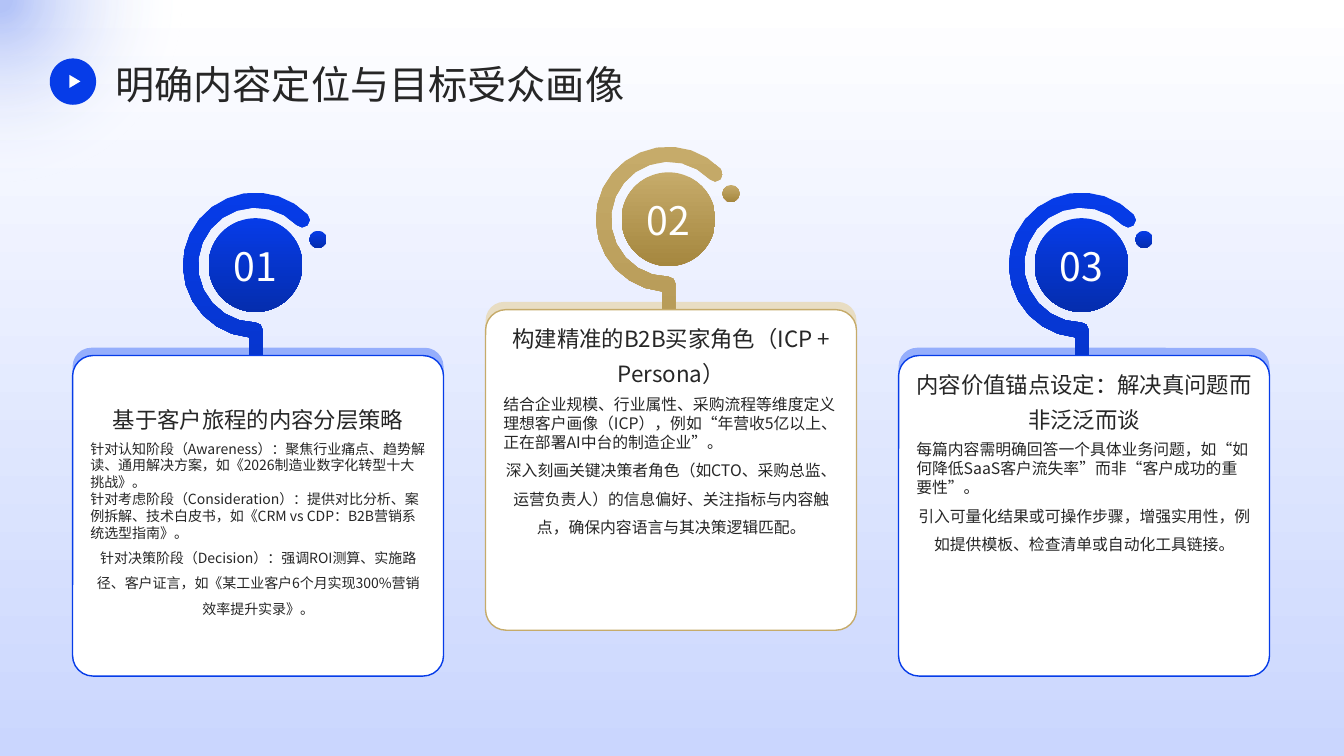
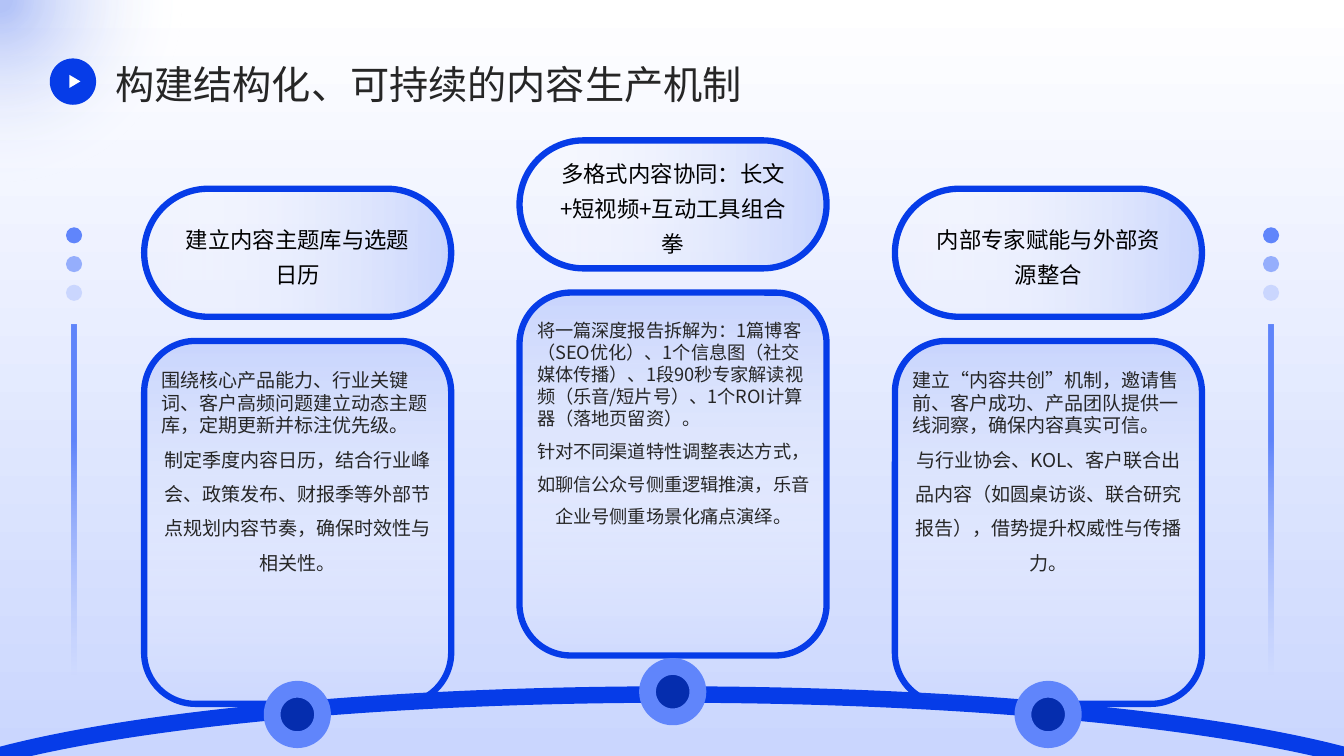
import math
from dataclasses import dataclass
from typing import Any, Iterable, Optional, Union

import pptx
import pptx.dml.color
import pptx.enum.shapes
import pptx.enum.text
import pptx.oxml
import pptx.oxml.ns
import pptx.util

KIND = pptx.enum.shapes.MSO_SHAPE
ALIGN = pptx.enum.text.PP_ALIGN
ANCHOR = pptx.enum.text.MSO_ANCHOR

# The slide is a grid of square cells, ten to the inch
WIDE, HIGH, CELL = 133.33, 75, 91440
FONT = "Noto Sans CJK SC"
BLUE, NAVY, SKY, MIST, PALE = "063CE8", "052DAE", "6085FB", "95AEFC", "CAD6FE"
GOLD, BRONZE, SAND = "C6AB6A", "A5873F", "E8DDC3"
WHITE, INK, BLACK = "FFFFFF", "262626", "000000"


@dataclass(frozen=True)
class Stop:
    at: int
    tone: str
    alpha: int = 100


@dataclass(frozen=True)
class Fade:
    stops: tuple[Stop, ...]
    angle: int = 90
    round: bool = False


@dataclass(frozen=True)
class Box:
    left: float
    top: float
    width: float
    height: float

    def units(self) -> list[int]:
        return [cell(n) for n in (self.left, self.top, self.width, self.height)]


@dataclass(frozen=True)
class Style:
    size: float
    tone: str = INK
    space: float = 1.0
    align: Any = ALIGN.CENTER
    anchor: Any = ANCHOR.MIDDLE


@dataclass(frozen=True)
class Topic:
    head: str
    body: tuple[str, ...]
    size: float
    lift: float = 0
    tones: tuple[str, str, str] = (BLUE, NAVY, MIST)


Fill = Union[str, Fade, None]


def cell(count: float) -> int:
    return round(count * CELL)


def color(tone: str) -> pptx.dml.color.RGBColor:
    return pptx.dml.color.RGBColor.from_string(tone)


def disc(x: float, y: float, size: float) -> Box:
    return Box(x - size / 2, y - size / 2, size, size)


def blend(item: Any, fade: Fade) -> None:
    """Fill a shape with a gradient whose stops may be clear."""
    stops = "".join(
        f'<a:gs pos="{stop.at * 1000}"><a:srgbClr val="{stop.tone}">'
        f'<a:alpha val="{stop.alpha * 1000}"/></a:srgbClr></a:gs>'
        for stop in fade.stops)
    way = (f'<a:lin ang="{fade.angle * 60000}" scaled="0"/>' if not fade.round else
           '<a:path path="circle"><a:fillToRect l="50000" t="50000" '
           'r="50000" b="50000"/></a:path>')
    node = pptx.oxml.parse_xml(
        f'<a:gradFill {pptx.oxml.ns.nsdecls("a")} rotWithShape="1">'
        f'<a:gsLst>{stops}</a:gsLst>{way}</a:gradFill>')
    item.fill.background()
    props = item._element.spPr
    props.replace(props.find(pptx.oxml.ns.qn("a:noFill")), node)


def paint(item: Any, fill: Fill, line: str = "", width: float = 0) -> None:
    item.shadow.inherit = False
    if isinstance(fill, Fade):
        blend(item, fill)
    elif fill:
        item.fill.solid()
        item.fill.fore_color.rgb = color(fill)
    else:
        item.fill.background()
    if line:
        item.line.color.rgb = color(line)
        item.line.width = pptx.util.Pt(width)
    else:
        item.line.fill.background()


def shape(page: Any, kind: Any, box: Box, fill: Fill, line: str = "",
          width: float = 0, bend: Optional[float] = None) -> Any:
    item = page.shapes.add_shape(kind, *box.units())
    paint(item, fill, line, width)
    if bend is not None:
        item.adjustments[0] = bend
    return item


def label(page: Any, box: Box, lines: Iterable[str], style: Style) -> None:
    """Add text; lead lines are tight and flush left, the last has the style."""
    frame = page.shapes.add_textbox(*box.units()).text_frame
    look = {"word_wrap": True, "vertical_anchor": style.anchor, "margin_left": 0,
            "margin_right": 0, "margin_top": 0, "margin_bottom": 0}
    for name, value in look.items():
        setattr(frame, name, value)
    lines = list(lines)
    for row, words in enumerate(lines):
        para = frame.add_paragraph() if row else frame.paragraphs[0]
        last = row == len(lines) - 1
        para.alignment = style.align if last else ALIGN.LEFT
        para.line_spacing = style.space if last else 1.0
        # Keep punctuation inside the text box
        para._p.get_or_add_pPr().set("hangingPunct", "0")
        run = para.add_run()
        run.text = words
        for name, value in {"name": FONT, "size": pptx.util.Pt(style.size)}.items():
            setattr(run.font, name, value)
        run.font.color.rgb = color(style.tone)
        run.font._element.append(pptx.oxml.parse_xml(
            f'<a:ea {pptx.oxml.ns.nsdecls("a")} typeface="{FONT}"/>'))


def down(top: str, base: str) -> Fade:
    return Fade((Stop(0, top), Stop(100, base)))


def start(deck: Any) -> Any:
    page = deck.slides.add_slide(deck.slide_layouts[6])
    shape(page, KIND.RECTANGLE, Box(0, 0, WIDE, HIGH), down(WHITE, PALE))
    return page


def title(page: Any, words: str) -> None:
    """Draw the corner glow, the play badge and the slide title."""
    glow = Fade((Stop(4, BLUE, 30), Stop(72, WHITE, 0)), round=True)
    shape(page, KIND.OVAL, disc(0, 0, 36), glow)
    label(page, Box(11.44, 5.7, 114.5, 4.7), [words],
          Style(28, space=1.1, align=ALIGN.LEFT))
    shape(page, KIND.OVAL, Box(4.94, 5.8, 4.6, 4.6), BLUE)
    shape(page, KIND.ISOSCELES_TRIANGLE, Box(6.78, 7.53, 1.3, 1.1), WHITE).rotation = 90


def arc(x: float, y: float, size: float, first: int, last: int,
        parts: int) -> list[tuple[float, float]]:
    """Points on a circle, clockwise when last exceeds first."""
    turns = [math.radians(first + (last - first) * n / parts) for n in range(parts + 1)]
    return [(x + size * math.cos(t), y + size * math.sin(t)) for t in turns]


def hook(page: Any, x: float, y: float, fill: Fade) -> None:
    """Draw an open ring on a stem, its centre at x, y."""
    outer, inner, stem, foot = 7.2, 5.7, 0.7, 29.1
    tip, mid = 316, (outer + inner) / 2
    cap = arc(x, y, mid, tip, tip, 1)[0]
    dots = (arc(x, y, outer, 95, tip, 16)
            + arc(*cap, (outer - inner) / 2, tip, tip + 180, 4)[1:]
            + arc(x, y, inner, tip, 90, 14)[1:]
            + arc(x, y + inner + stem, stem, 270, 360, 2)[1:]
            + [(x + stem, y + foot), (x - stem, y + foot)])
    dots = [(px * 100, py * 100) for px, py in dots]
    form = page.shapes.build_freeform(*dots[0], scale=CELL / 100)
    form.add_line_segments(dots[1:], close=True)
    paint(form.convert_to_shape(), fill)


def audience(deck: Any, topics: list[Topic]) -> None:
    page = start(deck)
    left, pitch, width, bend = 7.2, 40.97, 36.8, 0.064
    spots = [(left + pitch * col, topic) for col, topic in enumerate(topics)]
    # Tabs behind the cards
    for x, topic in spots:
        shape(page, KIND.ROUNDED_RECTANGLE, Box(x, 34.5 - topic.lift, width, 28.9),
              topic.tones[2], bend=bend)
    # Numbered hooks and cards
    for number, (x, topic) in enumerate(spots, 1):
        main, deep, _ = topic.tones
        fade = down(main, deep)
        mid, hub, top = x + 18.15, 26.3 - topic.lift, 35.27 - topic.lift
        hook(page, mid, hub, fade)
        shape(page, KIND.OVAL, disc(mid, hub, 9.3), fade)
        shape(page, KIND.ROUNDED_RECTANGLE, Box(x, top, width, 31.8), WHITE, main, 1, bend)
        label(page, Box(x + 1.77, top + 1.5, 33.3, 6.2), [topic.head],
              Style(16, space=1.3, anchor=ANCHOR.BOTTOM))
        label(page, Box(x + 1.77, top + 8.4, 33.3, 21.7), topic.body,
              Style(topic.size, space=1.5, anchor=ANCHOR.TOP))
        label(page, Box(mid - 4.4, hub - 3.1, 8.8, 6.3), [f"{number:02}"],
              Style(28, WHITE))
    # Dots beside the hooks
    for x, topic in spots:
        shape(page, KIND.OVAL, disc(x + 24.35, 23.75 - topic.lift, 1.7),
              down(*topic.tones[:2]))
    title(page, "明确内容定位与目标受众画像")


def process(deck: Any, topics: list[Topic]) -> None:
    page = start(deck)
    left, pitch, width = 14.3, 37.24, 30.46
    clear = (Stop(0, PALE), Stop(100, WHITE, 0))
    # Curved base line
    shape(page, KIND.OVAL, Box(-11.2, 68.9, 155.8, 24.9), None, BLUE, 11.75)
    # Side dots and fading bars
    for x in (7.35, 126.1):
        for row, tone in enumerate((SKY, MIST, PALE)):
            shape(page, KIND.OVAL, disc(x, 23.35 + 2.85 * row, 1.6), tone)
        shape(page, KIND.RECTANGLE, Box(x - 0.25, 32.2, 0.5, 34.7),
              Fade((Stop(33, SKY), Stop(100, MIST, 0))))
    # Pills, cards and nodes
    for col, topic in enumerate(topics):
        x, top = left + pitch * col, 18.73 - topic.lift
        shape(page, KIND.ROUNDED_RECTANGLE, Box(x, top, width, 12.7),
              Fade(clear, 180), BLUE, 4.5, 0.5)
        label(page, Box(x + 3.68, top + 2.1, 23.1, 8.6), [topic.head],
              Style(16, BLACK, 1.3))
        shape(page, KIND.ROUNDED_RECTANGLE, Box(x, top + 15.1, width, 36),
              Fade(clear), BLUE, 4.5)
        label(page, Box(x + 1.75, top + 17.8, 27, 28.3), topic.body,
              Style(topic.size, space=1.5, anchor=ANCHOR.TOP))
        shape(page, KIND.OVAL, disc(x + 15.2, 70.88 - topic.lift * 0.47, 5),
              NAVY, SKY, 12)
    title(page, "构建结构化、可持续的内容生产机制")


GROUPS = [
    Topic("基于客户旅程的内容分层策略", (
        "针对认知阶段（Awareness）：聚焦行业痛点、趋势解读、通用解决方案，如《2026制造业数字化转型十大挑战》。",
        "针对考虑阶段（Consideration）：提供对比分析、案例拆解、技术白皮书，如《CRM vs CDP：B2B营销系统选型指南》。",
        "针对决策阶段（Decision）：强调ROI测算、实施路径、客户证言，如《某工业客户6个月实现300%营销效率提升实录》。",
    ), 10),
    Topic("构建精准的B2B买家角色（ICP + Persona）", (
        "结合企业规模、行业属性、采购流程等维度定义理想客户画像（ICP），例如“年营收5亿以上、正在部署AI中台的制造企业”。",
        "深入刻画关键决策者角色（如CTO、采购总监、运营负责人）的信息偏好、关注指标与内容触点，确保内容语言与其决策逻辑匹配。",
    ), 11.3, 4.55, (GOLD, BRONZE, SAND)),
    Topic("内容价值锚点设定：解决真问题而非泛泛而谈", (
        "每篇内容需明确回答一个具体业务问题，如“如何降低SaaS客户流失率”而非“客户成功的重要性”。",
        "引入可量化结果或可操作步骤，增强实用性，例如提供模板、检查清单或自动化工具链接。",
    ), 11.3),
]

STEPS = [
    Topic("建立内容主题库与选题日历", (
        "围绕核心产品能力、行业关键词、客户高频问题建立动态主题库，定期更新并标注优先级。",
        "制定季度内容日历，结合行业峰会、政策发布、财报季等外部节点规划内容节奏，确保时效性与相关性。",
    ), 13.6),
    Topic("多格式内容协同：长文+短视频+互动工具组合拳", (
        "将一篇深度报告拆解为：1篇博客（SEO优化）、1个信息图（社交媒体传播）、1段90秒专家解读视频（乐音/短片号）、1个ROI计算器（落地页留资）。",
        "针对不同渠道特性调整表达方式，如聊信公众号侧重逻辑推演，乐音企业号侧重场景化痛点演绎。",
    ), 13, 4.8),
    Topic("内部专家赋能与外部资源整合", (
        "建立“内容共创”机制，邀请售前、客户成功、产品团队提供一线洞察，确保内容真实可信。",
        "与行业协会、KOL、客户联合出品内容（如圆桌访谈、联合研究报告），借势提升权威性与传播力。",
    ), 13.6),
]


def main() -> None:
    deck = pptx.Presentation()
    deck.slide_width, deck.slide_height = cell(WIDE), cell(HIGH)
    audience(deck, GROUPS)
    process(deck, STEPS)
    deck.save("out.pptx")


if __name__ == "__main__":
    main()
